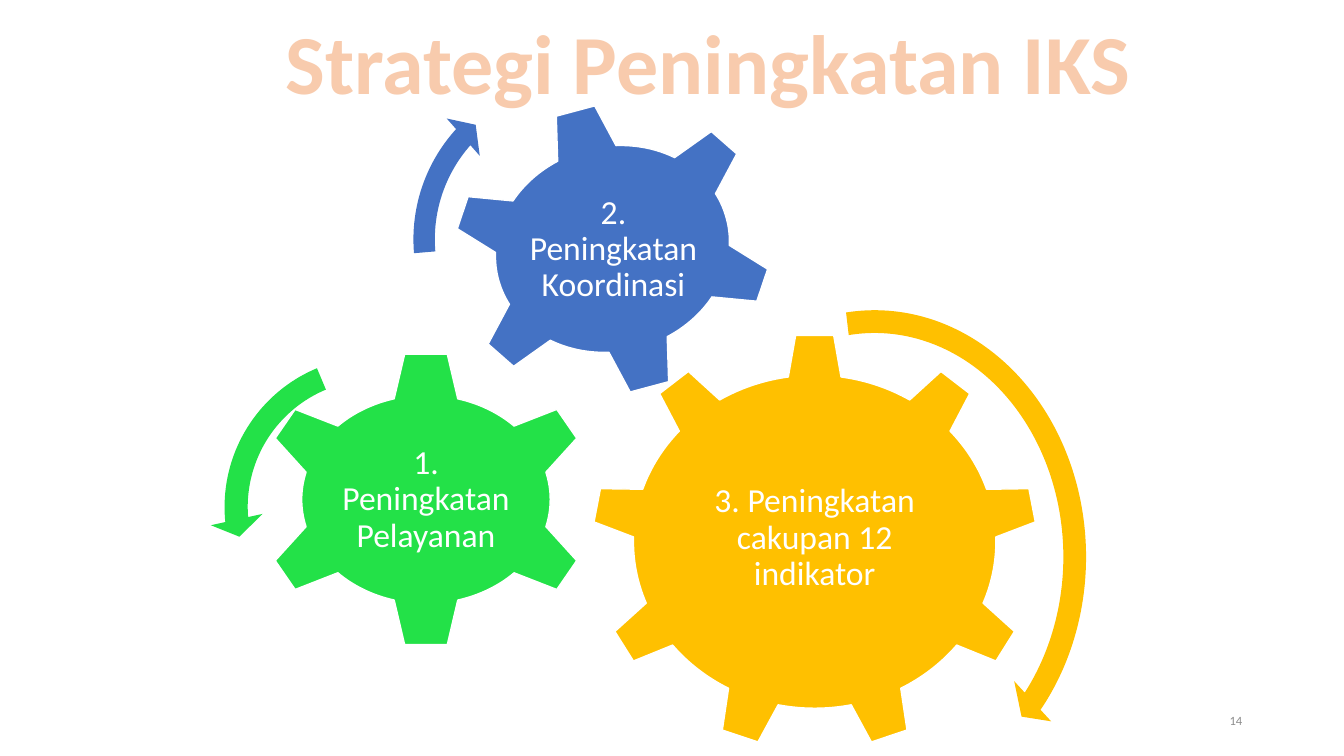
from dataclasses import dataclass

from lxml import etree
from pptx import Presentation
from pptx.dml.color import RGBColor
from pptx.enum.shapes import MSO_SHAPE
from pptx.enum.text import MSO_ANCHOR, MSO_AUTO_SIZE, PP_ALIGN
from pptx.oxml.ns import qn
from pptx.util import Inches, Pt

GEAR_SIX, GEAR_NINE = MSO_SHAPE.GEAR_6, MSO_SHAPE.GEAR_9
ARROW, LEFT_ARROW = MSO_SHAPE.CIRCULAR_ARROW, MSO_SHAPE.LEFT_CIRCULAR_ARROW
CENTER, RIGHT = PP_ALIGN.CENTER, PP_ALIGN.RIGHT
TOP, MIDDLE = MSO_ANCHOR.TOP, MSO_ANCHOR.MIDDLE
GROW = MSO_AUTO_SIZE.SHAPE_TO_FIT_TEXT


@dataclass(frozen=True)
class Theme:
    font: str = "Calibri"
    white: str = "FFFFFF"
    gold: str = "FFC000"
    green: str = "23E148"
    blue: str = "4472C4"
    peach: str = "F8CBAD"
    orange: str = "ED7D31"
    gray: str = "8C8C8C"
    title_size: float = 60
    label_size: float = 24
    number_size: float = 9
    title_outline: float = 1.75
    gear_outline: float = 1


class SlideBuilder:
    """Draws styled elements on the current slide."""

    def __init__(self, slide, theme):
        self.slide = slide
        self.theme = theme

    def place(self, shape, box):
        shape.left, shape.top, shape.width, shape.height = map(Inches, box)

    def add_text(self, shape, text, size, color, align=CENTER, bold=False):
        paragraph = shape.text_frame.paragraphs[0]
        paragraph.alignment = align
        run = paragraph.add_run()
        run.text = text
        font = run.font
        font.name, font.size, font.bold = self.theme.font, Pt(size), bold
        font.color.rgb = RGBColor.from_string(color)
        return paragraph

    def title(self, text, box):
        shape = self.slide.shapes.title
        self.place(shape, box)
        frame = shape.text_frame
        frame.word_wrap, frame.auto_size = False, GROW
        frame.vertical_anchor = TOP
        paragraph = self.add_text(shape, text, self.theme.title_size, self.theme.peach, bold=True)
        properties = paragraph.runs[0]._r.get_or_add_rPr()
        outline = etree.Element(qn("a:ln"), w=str(Pt(self.theme.title_outline)))
        fill = etree.SubElement(outline, qn("a:solidFill"))
        etree.SubElement(fill, qn("a:srgbClr"), val=self.theme.orange)
        properties.insert(0, outline)

    def text_box(self, box):
        shape = self.slide.shapes.add_textbox(*map(Inches, box))
        shape.text_frame.word_wrap = True
        shape.text_frame.vertical_anchor = MIDDLE
        return shape

    def page_number(self, text, box):
        shape = self.text_box(box)
        self.add_text(shape, text, self.theme.number_size, self.theme.gray, RIGHT)

    def label(self, text, box):
        shape = self.text_box(box)
        frame = shape.text_frame
        frame.margin_left = frame.margin_right = Inches(0.03)
        frame.margin_top = frame.margin_bottom = Inches(0.03)
        paragraph = self.add_text(shape, text, self.theme.label_size, self.theme.white)
        paragraph.line_spacing = 0.9

    def filled_shape(self, kind, box, color):
        shape = self.slide.shapes.add_shape(kind, *map(Inches, box))
        shape.shadow.inherit = False
        shape.fill.solid()
        shape.fill.fore_color.rgb = RGBColor.from_string(color)
        return shape

    def gear(self, kind, box, color, rotation, text, text_box):
        shape = self.filled_shape(kind, box, color)
        shape.rotation = rotation
        shape.line.color.rgb = RGBColor.from_string(self.theme.white)
        shape.line.width = Pt(self.theme.gear_outline)
        self.label(text, text_box)

    def turning_arrow(self, kind, box, color, adjustments):
        shape = self.filled_shape(kind, box, color)
        shape.line.fill.background()
        for index, value in enumerate(adjustments):
            shape.adjustments[index] = value


def main():
    theme = Theme()
    presentation = Presentation()
    presentation.slide_width, presentation.slide_height = Inches(13.33), Inches(7.5)
    slide = presentation.slides.add_slide(presentation.slide_layouts[5])
    builder = SlideBuilder(slide, theme)

    builder.page_number("14", (9.42, 6.95, 3, 0.4))
    builder.title("Strategi Peningkatan IKS", (2.69, 0.05, 8.67, 1.11))

    gears = [
        (GEAR_NINE, (5.87, 3.31, 4.42, 4.13), theme.gold, 0,
         "3. Peningkatan cakupan 12 indikator", (6.74, 4.28, 2.68, 2.12)),
        (GEAR_SIX, (2.55, 3.48, 3.35, 2.95), theme.green, 0,
         "1. Peningkatan Pelayanan", (3.35, 4.23, 1.75, 1.46)),
        (GEAR_SIX, (4.47, 1.02, 3.21, 2.9), theme.blue, 345,
         "2. Peningkatan Koordinasi", (5.2, 1.64, 1.77, 1.67)),
    ]
    for gear in gears:
        builder.gear(*gear)

    arrows = [
        (ARROW, (6.42, 2.92, 4.51, 5.21), theme.gold, (0.05, 2.99, 25.45, 158, 0.06)),
        (LEFT_ARROW, (2.08, 3.39, 3.28, 3.28), theme.green, (0.07, 4.3, 104.89, 148.38, 0.08)),
        (ARROW, (3.96, 0.61, 3.53, 3.53), theme.blue, (0.06, 3.94, 133.14, 105.08, 0.07)),
    ]
    for arrow in arrows:
        builder.turning_arrow(*arrow)

    presentation.save("out.pptx")


if __name__ == "__main__":
    main()
